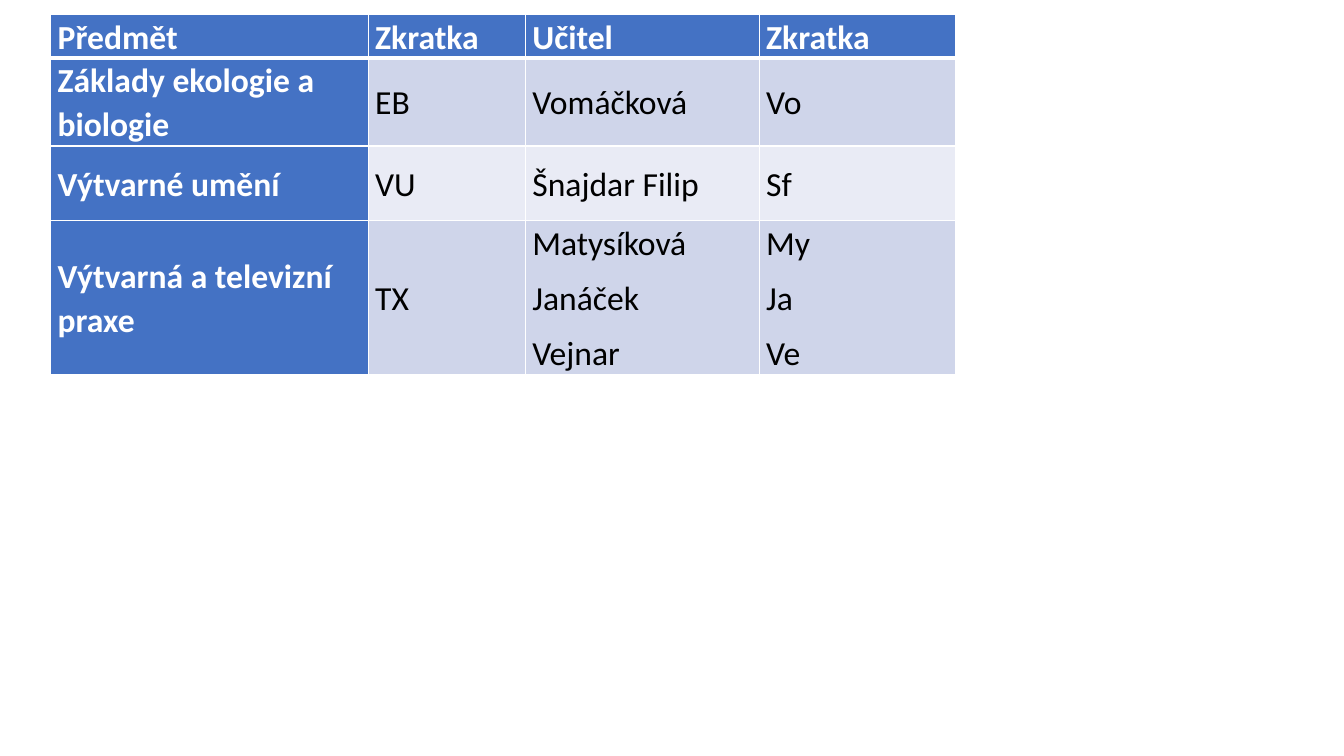
from dataclasses import dataclass

from lxml.etree import SubElement
from pptx import Presentation
from pptx.dml.color import RGBColor as Rgb
from pptx.enum.text import MSO_ANCHOR as Anchor
from pptx.oxml.ns import qn
from pptx.slide import Slide
from pptx.table import _Cell as Cell
from pptx.util import Pt

COLORS = {
    "head": "4472C4",
    "odd": "CFD5EA",
    "even": "E9EBF5",
    "white": "FFFFFF",
    "black": "000000",
}
FONT = "Calibri"
WIDTHS = (226.8, 112.3, 167, 140.4)


@dataclass
class Row:
    height: float
    texts: tuple[str, ...]


ROWS = (
    Row(26, ("Předmět", "Zkratka", "Učitel", "Zkratka")),
    Row(39, ("Základy ekologie a biologie", "EB", "Vomáčková", "Vo")),
    Row(53.3, ("Výtvarné umění", "VU", "Šnajdar Filip", "Sf")),
    Row(39, ("Výtvarná a televizní praxe", "TX",
             "Matysíková\nJanáček\nVejnar", "My\nJa\nVe")),
)


def rgb(name: str) -> Rgb:
    return Rgb.from_string(COLORS[name])


def add_border(cell: Cell, top: float, bottom: float) -> None:
    """White cell edges; the line under the header is thicker."""
    props = cell._tc.get_or_add_tcPr()
    edges = {"lnL": 1, "lnR": 1, "lnT": top, "lnB": bottom}
    for spot, (tag, width) in enumerate(edges.items()):
        line = SubElement(props, qn(f"a:{tag}"), w=str(Pt(width)))
        fill = SubElement(line, qn("a:solidFill"))
        SubElement(fill, qn("a:srgbClr"), val=COLORS["white"])
        props.insert(spot, line)


def fill_cell(cell: Cell, text: str, row: int, col: int) -> None:
    # Text
    head = row == 0 or col == 0
    cell.text = text
    cell.vertical_anchor = Anchor.MIDDLE
    cell.margin_left = cell.margin_right = Pt(5)
    cell.margin_top = cell.margin_bottom = Pt(0)
    for para in cell.text_frame.paragraphs:
        para.line_spacing = 1.07
        para.space_after = Pt(8)
        para.font.name = FONT
        para.font.size = Pt(24)
        para.font.bold = head
        para.font.color.rgb = rgb("white" if head else "black")

    # Fill and edges
    band = "odd" if row % 2 else "even"
    cell.fill.solid()
    cell.fill.fore_color.rgb = rgb("head" if head else band)
    add_border(cell, 3 if row == 1 else 1, 3 if row == 0 else 1)


def add_grid(slide: Slide) -> None:
    frame = slide.shapes.add_table(
        len(ROWS), len(WIDTHS), Pt(36.2), Pt(10.2), Pt(sum(WIDTHS)), Pt(250.5))
    table = frame.table
    table.first_col = True
    for col, width in zip(table.columns, WIDTHS):
        col.width = Pt(width)
    for i, row in enumerate(ROWS):
        table.rows[i].height = Pt(row.height)
        for j, text in enumerate(row.texts):
            fill_cell(table.cell(i, j), text, i, j)
    # Rows grow to fit their text
    frame.height = Pt(250.5)


def main() -> None:
    deck = Presentation()
    deck.slide_width, deck.slide_height = Pt(960), Pt(540)
    add_grid(deck.slides.add_slide(deck.slide_layouts[6]))
    deck.save("out.pptx")


if __name__ == "__main__":
    main()
